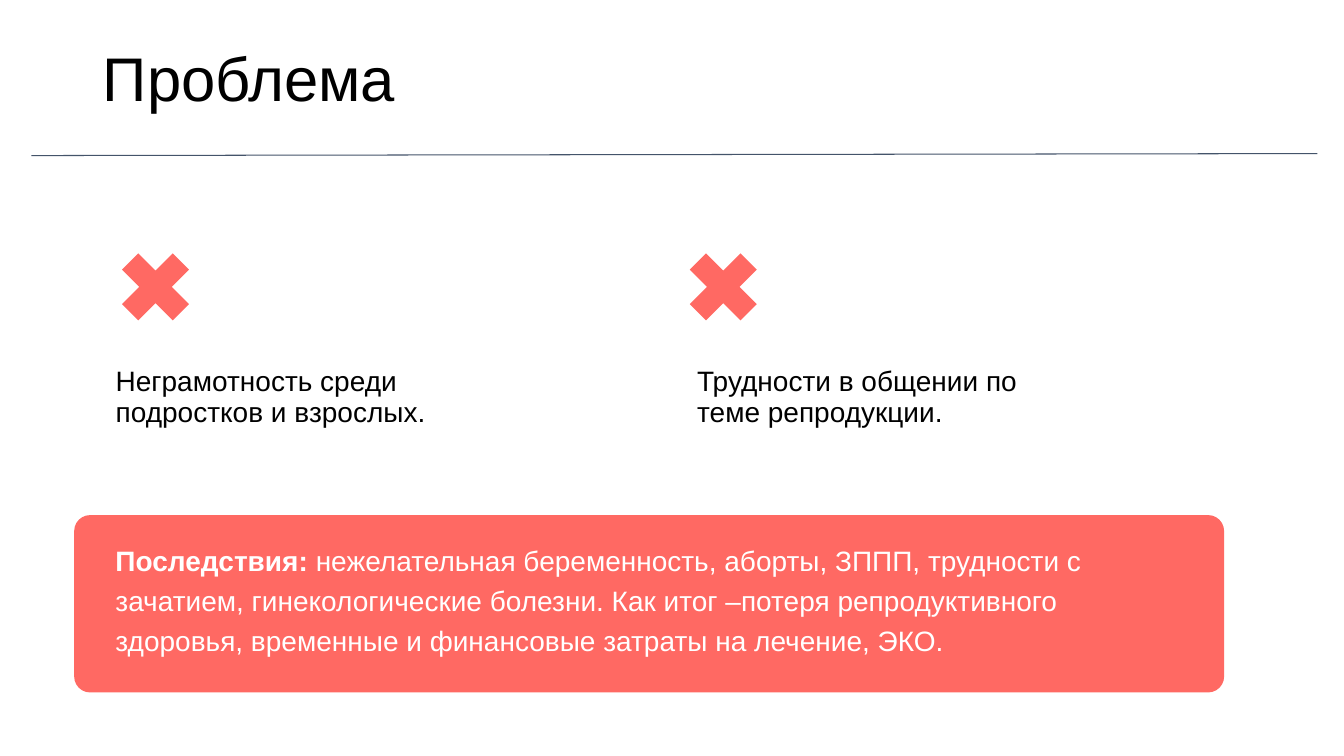
from pptx import Presentation
from pptx.dml.color import RGBColor
from pptx.enum import shapes, text
from pptx.oxml import ns
from pptx.util import Cm, Pt
from lxml import etree

TITLE = "Проблема"
ISSUES = [
    ("Неграмотность среди подростков и взрослых.", 2.34, 9.4, 2.69),
    ("Трудности в общении по теме репродукции.", 17, 8.92, 17),
]
LEAD = "Последствия: "
RESULT = (
    "нежелательная беременность, аборты, ЗППП, трудности с зачатием, "
    "гинекологические болезни. Как итог –потеря репродуктивного здоровья, "
    "временные и финансовые затраты на лечение, ЭКО."
)
THEME = {
    "font": "Arial",
    "title": Pt(44),
    "body": Pt(20),
    "ink": RGBColor.from_string("000000"),
    "light": RGBColor.from_string("FFFFFF"),
    "coral": RGBColor.from_string("FF6963"),
    "rule": RGBColor.from_string("44546A"),
}


def place(item, left, top, width, height):
    item.left, item.top = Cm(left), Cm(top)
    item.width, item.height = Cm(width), Cm(height)


def style(frame, size, color, space, anchor=text.MSO_ANCHOR.TOP):
    frame.word_wrap = True
    frame.auto_size = text.MSO_AUTO_SIZE.NONE
    frame.vertical_anchor = anchor
    line = frame.paragraphs[0]
    line.alignment = text.PP_ALIGN.LEFT
    line.line_spacing = space
    for run in line.runs:
        run.font.name = THEME["font"]
        run.font.size = size
        run.font.color.rgb = color


def indent(frame):
    line = frame.paragraphs[0]
    line.space_before = Pt(10)
    props = line._p.get_or_add_pPr()
    props.set("marL", str(Cm(0.32)))
    props.set("indent", "0")
    etree.SubElement(props, ns.qn("a:buNone"))


def block(slide, kind, *area):
    item = slide.shapes.add_shape(kind, *map(Cm, area))
    item.shadow.inherit = False
    item.fill.solid()
    item.fill.fore_color.rgb = THEME["coral"]
    item.line.fill.background()
    return item


def main():
    deck = Presentation()
    deck.slide_width, deck.slide_height = Cm(33.87), Cm(19.05)
    slide = deck.slides.add_slide(deck.slide_layouts[1])
    head, body = slide.placeholders

    panel = block(slide, shapes.MSO_SHAPE.ROUNDED_RECTANGLE, 1.87, 12.98, 28.98, 4.47)
    panel.adjustments[0] = 0.09

    place(head, 2.34, 1.02, 28.52, 2)
    head.text_frame.text = TITLE
    style(head.text_frame, THEME["title"], THEME["ink"], 0.9, text.MSO_ANCHOR.BOTTOM)

    rule = slide.shapes.add_connector(
        shapes.MSO_CONNECTOR.STRAIGHT, Cm(0.79), Cm(3.92), Cm(33.2), Cm(3.87))
    rule.line.color.rgb = THEME["rule"]
    rule.line.width = Pt(0.75)
    etree.SubElement(rule._element.spPr, ns.qn("a:effectLst"))

    other = slide.shapes.add_textbox(0, 0, 0, 0)
    for box, (words, left, width, mark) in zip((body, other), ISSUES):
        place(box, left, 9.14, width, 2.77)
        box.text_frame.text = words
        style(box.text_frame, THEME["body"], THEME["ink"], 0.9)
        indent(box.text_frame)
        block(slide, shapes.MSO_SHAPE.MATH_MULTIPLY, mark, 6, 2.46, 2.46)

    note = slide.shapes.add_textbox(Cm(2.34), Cm(13.39), Cm(25.17), Cm(2.77))
    note.text_frame.text = LEAD
    line = note.text_frame.paragraphs[0]
    line.runs[0].font.bold = True
    line.add_run().text = RESULT
    style(note.text_frame, THEME["body"], THEME["light"], 1.2)
    indent(note.text_frame)

    deck.save("out.pptx")


if __name__ == "__main__":
    main()
